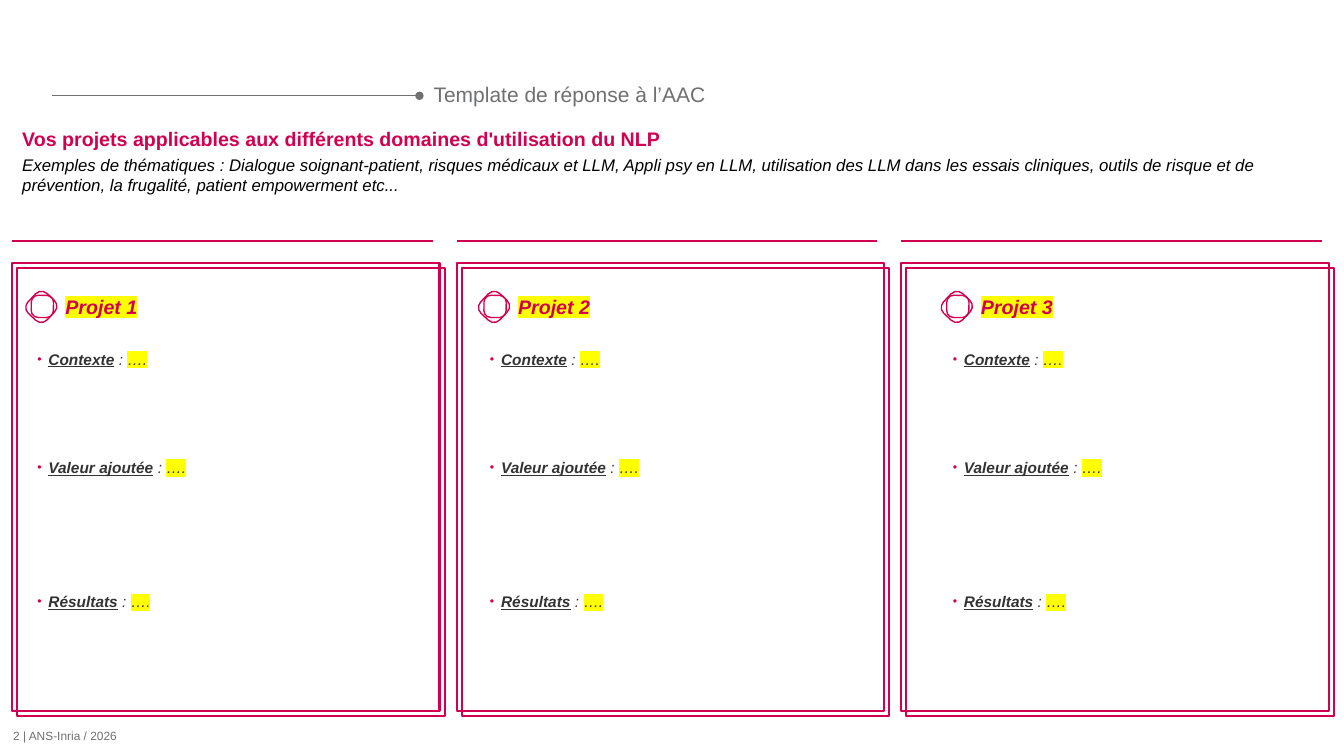
from dataclasses import dataclass
from typing import Any

from lxml.etree import SubElement as Sub
from pptx import Presentation
from pptx.dml.color import RGBColor
from pptx.enum.shapes import MSO_CONNECTOR as Wire, MSO_SHAPE as Shape
from pptx.enum.text import MSO_ANCHOR as Anchor, MSO_AUTO_SIZE as Fit, PP_ALIGN as Align
from pptx.oxml.ns import qn
from pptx.util import Inches, Pt

PINK = RGBColor(0xD2, 0x00, 0x50)
GREY = RGBColor(0x6F, 0x70, 0x72)
DARK = RGBColor(0x33, 0x33, 0x33)
BLACK = RGBColor(0x00, 0x00, 0x00)
YELLOW = RGBColor(0xFF, 0xFF, 0x00)
FONT = "Arial"
STEP = 4.41


@dataclass
class Run:
    text: str
    size: float
    color: RGBColor
    bold: bool = False
    italic: bool = False
    under: bool = False
    mark: bool = False


@dataclass
class Para:
    runs: list[Run]
    before: float = 0
    after: float = 0
    bullet: bool = False


@dataclass
class Card:
    name: str
    left: float
    inner: float


@dataclass
class Topic:
    name: str
    before: float


CARDS = [
    Card(f"Projet {i + 1}", 0.12 + STEP * i, inner)
    for i, inner in enumerate((0.27, 4.76, 9.35))
]
TOPICS = [Topic("Contexte", 0), Topic("Valeur ajoutée", 58), Topic("Résultats", 77)]


def place(box: Any, left: float, top: float, width: float, height: float) -> Any:
    box.left, box.top = Inches(left), Inches(top)
    box.width, box.height = Inches(width), Inches(height)
    return box


def write(box: Any, paras: list[Para], *, anchor: Any = Anchor.TOP,
          align: Any = Align.LEFT, lines: Any = 1.0, inset: bool = True) -> None:
    frame = box.text_frame
    frame.word_wrap = True
    frame.auto_size = Fit.NONE
    frame.vertical_anchor = anchor
    frame.margin_left = frame.margin_right = Inches(0.1 if inset else 0)
    frame.margin_top = frame.margin_bottom = Inches(0.05 if inset else 0)
    for i, para in enumerate(paras):
        line = frame.add_paragraph() if i else frame.paragraphs[0]
        line.alignment, line.line_spacing = align, lines
        line.space_before, line.space_after = Pt(para.before), Pt(para.after)
        props = line._p.get_or_add_pPr()
        indent = Inches(0.11 if para.bullet else 0)
        props.set("marL", str(indent))
        props.set("indent", str(-indent))
        if para.bullet:
            Sub(Sub(props, qn("a:buClr")), qn("a:srgbClr"), val=str(PINK))
            Sub(props, qn("a:buSzPct"), val="80000")
            Sub(props, qn("a:buFont"), typeface=FONT)
            Sub(props, qn("a:buChar"), char="•")
        else:
            Sub(props, qn("a:buNone"))
        for part in para.runs:
            run = line.add_run()
            run.text = part.text
            font = run.font
            font.size, font.name = Pt(part.size), FONT
            font.bold, font.italic, font.underline = part.bold, part.italic, part.under
            font.color.rgb = part.color
            if part.mark:
                look = run._r.get_or_add_rPr()
                light = Sub(look, qn("a:highlight"))
                Sub(light, qn("a:srgbClr"), val=str(YELLOW))
                look.find(qn("a:latin")).addprevious(light)


def label(shapes: Any, left: float, top: float, width: float, height: float) -> Any:
    return shapes.add_textbox(Inches(left), Inches(top), Inches(width), Inches(height))


def rule(shapes: Any, left: float, right: float, top: float,
         color: RGBColor, weight: float) -> Any:
    line = shapes.add_connector(
        Wire.STRAIGHT, Inches(left), Inches(top), Inches(right), Inches(top))
    line.line.color.rgb, line.line.width = color, Pt(weight)
    Sub(line._element.spPr, qn("a:effectLst"))
    return line


def frame(shapes: Any, kind: Any, left: float, top: float, width: float,
          height: float, weight: float, turn: float = 0) -> None:
    box = shapes.add_shape(
        kind, Inches(left), Inches(top), Inches(width), Inches(height))
    box.shadow.inherit = False
    box.fill.background()
    box.line.color.rgb, box.line.width = PINK, Pt(weight)
    box.rotation = turn
    if kind == Shape.ROUNDED_RECTANGLE:
        box.adjustments[0] = 0.305


def draw(shapes: Any, card: Card, body: Any) -> None:
    rule(shapes, card.left, card.left + 4.17, 2.39, PINK, 1.5)
    for shift in (0.05, 0):
        frame(shapes, Shape.RECTANGLE, card.left + shift, 2.61 + shift, 4.24, 4.44, 1.5)
    frame(shapes, Shape.ROUNDED_RECTANGLE, card.inner + 0.01, 2.91, 0.26, 0.27, 1, 43.3)
    frame(shapes, Shape.ROUNDED_RECTANGLE, card.inner + 0.04, 2.93, 0.22, 0.22, 1, 91)
    head = Run(card.name, 14, PINK, bold=True, italic=True, mark=True)
    write(label(shapes, card.inner + 0.28, 2.86, 2.85, 0.36),
          [Para([head], after=6)], anchor=Anchor.MIDDLE)
    items = [
        Para([
            Run(topic.name, 11, DARK, bold=True, italic=True, under=True),
            Run(" : ", 11, DARK, italic=True),
            Run("….", 11, DARK, italic=True, mark=True),
        ], before=topic.before, after=6, bullet=True)
        for topic in TOPICS
    ]
    write(place(body, card.inner, 3.42, 3.94, 3.48), items, align=Align.JUSTIFY)


def main() -> None:
    deck = Presentation()
    deck.slide_width, deck.slide_height = Inches(13.33), Inches(7.5)
    slide = deck.slides.add_slide(deck.slide_layouts.get_by_name("Comparison"))
    shapes = slide.shapes
    title, intro, *lists = slide.placeholders

    write(place(title, 4.2, 0.78, 7.7, 0.33),
          [Para([Run("Template de réponse à l’AAC", 15, GREY)])],
          anchor=Anchor.MIDDLE, lines=0.9)
    lead = rule(shapes, 0.52, 4.16, 0.95, GREY, 0.75)
    Sub(lead.line._get_or_add_ln(), qn("a:tailEnd"), type="oval")

    write(place(intro, 0.12, 1.21, 12.99, 0.98), [
        Para([Run("Vos projets applicables aux différents domaines d'utilisation du NLP",
                  14, PINK, bold=True)]),
        Para([Run("Exemples de thématiques : Dialogue soignant‑patient, risques médicaux "
                  "et LLM, Appli psy en LLM, utilisation des LLM dans les essais cliniques, "
                  "outils de risque et de prévention, la frugalité, patient empowerment "
                  "etc...", 12, BLACK, italic=True)], before=3),
    ])
    for card, body in zip(CARDS, lists):
        draw(shapes, card, body)
    write(label(shapes, 0.13, 7.22, 7.21, 0.14),
          [Para([Run("2 | ANS-Inria / 2026", 8.5, GREY)])], lines=Pt(11), inset=False)
    deck.save("out.pptx")


if __name__ == "__main__":
    main()
